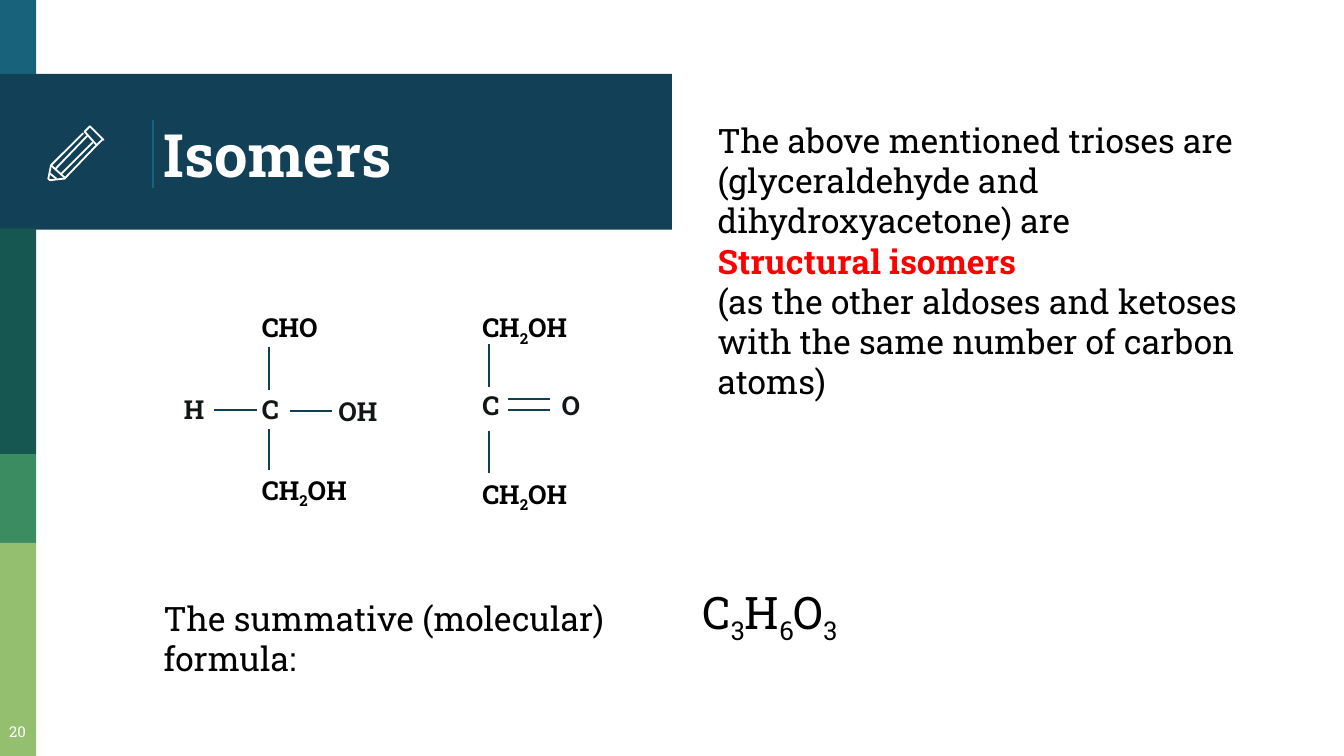
from itertools import groupby
from lxml.etree import SubElement
from pptx import Presentation
from pptx.dml.color import RGBColor
from pptx.enum.shapes import MSO_CONNECTOR, MSO_SHAPE
from pptx.enum.text import MSO_ANCHOR, MSO_AUTO_SIZE, PP_ALIGN
from pptx.oxml.ns import qn
from pptx.util import Inches, Pt

FONT = "Roboto Slab"
COLORS = {
    "teal": "18637B", "navy": "124057", "pine": "165751", "green": "3B8D61",
    "lime": "94BF6E", "bond": "0E4253", "ink": "121617", "black": "000000",
    "white": "FFFFFF", "red": "FF0000",
}
HUES = {name: RGBColor.from_string(code) for name, code in COLORS.items()}


def style(font, size, hue, bold=False):
    font.name, font.size, font.bold = FONT, Pt(size), bold
    font.color.rgb = HUES[hue]


def add_text(shapes, place, lines, size, hue="black", bold=False, sub=False):
    box = shapes.add_textbox(*map(Inches, place))
    frame = box.text_frame
    frame.word_wrap = True
    for i, line in enumerate(lines):
        par = frame.paragraphs[0] if i == 0 else frame.add_paragraph()
        parts = groupby(line, str.isdigit) if sub else [(False, line)]
        for low, part in parts:
            run = par.add_run()
            run.text = "".join(part)
            style(run.font, size, hue, bold)
            if low:
                run._r.get_or_add_rPr().set("baseline", "-25000")
    return frame


deck = Presentation()
deck.slide_width, deck.slide_height = Inches(10), Inches(5.625)
slide = deck.slides.add_slide(deck.slide_layouts[5])
shapes = slide.shapes

bars = [
    (0, 0.27, 0.58, "teal"), (0.55, 5, 1.16, "navy"), (1.7, 0.27, 1.68, "pine"),
    (3.38, 0.27, 0.66, "green"), (4.04, 0.27, 1.59, "lime"),
]
for top, width, height, hue in bars:
    bar = shapes.add_shape(MSO_SHAPE.RECTANGLE, 0, Inches(top), Inches(width), Inches(height))
    bar.shadow.inherit = False
    bar.fill.solid()
    bar.fill.fore_color.rgb = HUES[hue]
    bar.line.fill.background()

title = shapes.title
title.left, title.top = Inches(1.12), Inches(0.58)
title.width, title.height = Inches(3.88), Inches(1.12)
frame = title.text_frame
frame.text = "Isomers"
frame.auto_size = MSO_AUTO_SIZE.NONE
frame.vertical_anchor = MSO_ANCHOR.MIDDLE
frame.margin_left = frame.margin_right = frame.margin_top = frame.margin_bottom = Inches(0.1)
frame.paragraphs[0].alignment = PP_ALIGN.LEFT
style(frame.paragraphs[0].runs[0].font, 32, "white", True)
title.element.getparent().append(title.element)

pencil = shapes.add_group_shape()
strokes = [
    ([(0.76, 1.03), (0.68, 0.95), (0.67, 0.94), (0.66, 0.95), (0.63, 0.98),
      (0.72, 1.08), (0.76, 1.04), (0.77, 1.04)], True),
    ([(0.69, 1.06), (0.45, 1.3)], False),
    ([(0.62, 0.99), (0.38, 1.23), (0.36, 1.33), (0.37, 1.34), (0.38, 1.34),
      (0.47, 1.33), (0.48, 1.33), (0.72, 1.08)], False),
    ([(0.41, 1.26), (0.65, 1.01)], False),
    ([(0.42, 1.33), (0.37, 1.29)], False),
    ([(0.38, 1.23), (0.48, 1.32)], False),
]
for points, closed in strokes:
    spots = [(Inches(x), Inches(y)) for x, y in points]
    pen = pencil.shapes.build_freeform(*spots[0])
    pen.add_line_segments(spots[1:], close=closed)
    stroke = pen.convert_to_shape()
    stroke.shadow.inherit = False
    stroke.fill.background()
    stroke.line.color.rgb = HUES["white"]
    stroke.line.width = Pt(0.96)

ketose = shapes.add_group_shape()
aldose = shapes.add_group_shape()
lines = [
    (shapes, 1.14, 0.89, 1.14, 1.4, "teal", 0.75),
    (ketose.shapes, 3.64, 2.56, 3.64, 2.88, "bond", 1),
    (ketose.shapes, 3.64, 3.21, 3.64, 3.52, "bond", 1),
    (ketose.shapes, 4.09, 2.97, 3.78, 2.97, "bond", 1),
    (ketose.shapes, 4.09, 3.05, 3.78, 3.05, "bond", 1),
    (aldose.shapes, 2, 2.58, 2, 2.9, "bond", 1),
    (aldose.shapes, 2, 3.19, 2, 3.5, "bond", 1),
    (aldose.shapes, 1.91, 3.05, 1.59, 3.05, "bond", 1),
    (aldose.shapes, 2.47, 3.06, 2.16, 3.06, "bond", 1),
]
for home, x1, y1, x2, y2, hue, width in lines:
    line = home.add_connector(MSO_CONNECTOR.STRAIGHT, *map(Inches, (x1, y1, x2, y2)))
    line.line.color.rgb = HUES[hue]
    line.line.width = Pt(width)
    SubElement(line.element.spPr, qn("a:effectLst"))

atoms = [
    (ketose, 3.49, 2.27, 0.85, "CH2OH", "black"),
    (ketose, 3.49, 2.85, 0.31, "C", "ink"),
    (ketose, 4.08, 2.85, 0.34, "O", "ink"),
    (ketose, 3.49, 3.51, 0.85, "CH2OH", "black"),
    (aldose, 1.85, 2.27, 0.67, "CHO", "black"),
    (aldose, 1.27, 2.88, 0.36, "H", "ink"),
    (aldose, 1.85, 2.88, 0.31, "C", "ink"),
    (aldose, 2.42, 2.89, 0.5, "OH", "ink"),
    (aldose, 1.85, 3.48, 0.85, "CH2OH", "black"),
]
for group, left, top, width, label, hue in atoms:
    add_text(group.shapes, (left, top, width, 0.34), [label], 14, hue, True, True)

add_text(shapes, (1.12, 4.4, 3.8, 0.71), ["The summative (molecular) formula:"], 18)
add_text(shapes, (5.13, 4.3, 1.31, 0.5), ["C3H6O3"], 24, sub=True)

notes = add_text(shapes, (5.24, 0.84, 4.65, 2.46), [
    "The above mentioned trioses are (glyceraldehyde and dihydroxyacetone) are",
    "Structural isomers",
    "(as the other aldoses and ketoses with the same number of carbon atoms)",
], 18)
style(notes.paragraphs[1].runs[0].font, 18, "red", True)

number = add_text(shapes, (-0.06, 5.27, 0.38, 0.35), ["20"], 8, "white")
number.margin_top = number.margin_bottom = Inches(0.1)
number.vertical_anchor = MSO_ANCHOR.MIDDLE
number.paragraphs[0].alignment = PP_ALIGN.CENTER

deck.save("out.pptx")
